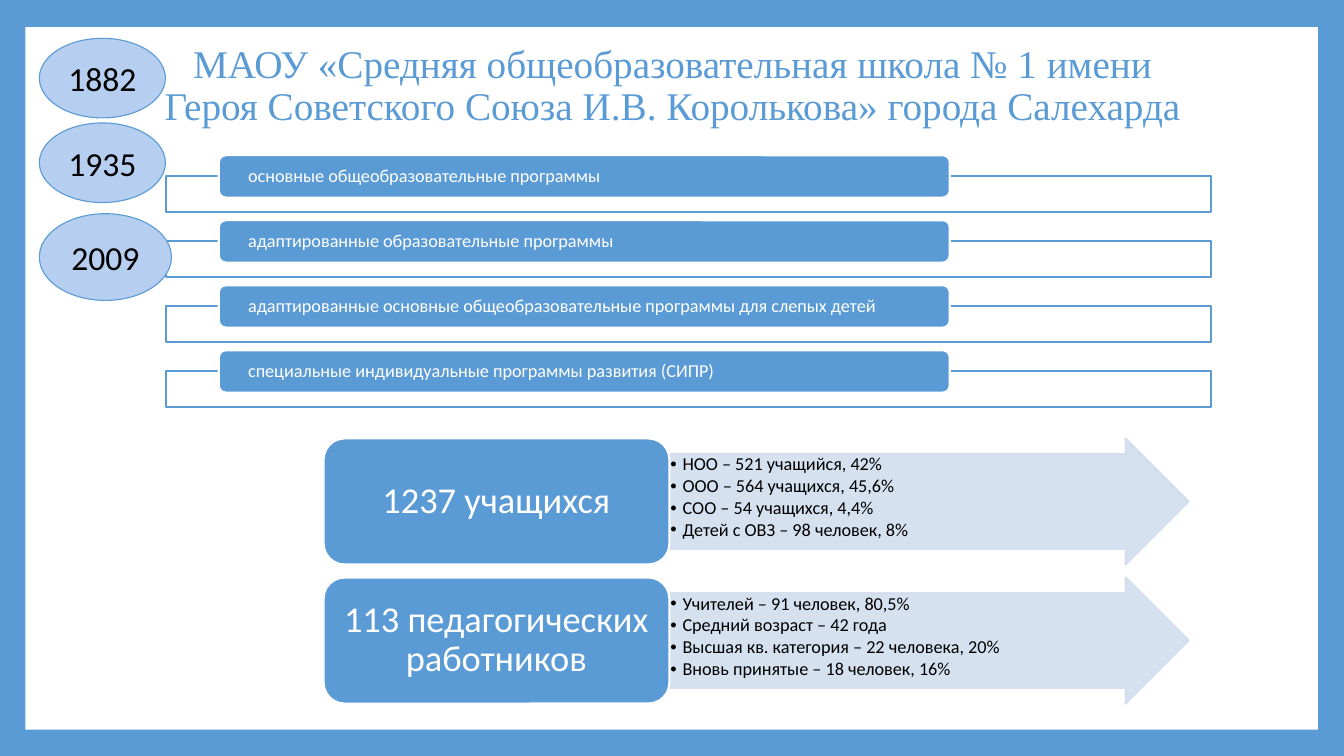
from lxml.etree import SubElement
from pptx import Presentation
from pptx.dml.color import RGBColor
from pptx.enum.shapes import MSO_SHAPE as SHAPE
from pptx.enum.text import MSO_ANCHOR as ANCHOR, PP_ALIGN as ALIGN
from pptx.oxml.ns import qn
from pptx.util import Inches, Pt

BLUE, PALE, OVAL = "5B9BD5", "D2DEEF", "B6CFF0"
WHITE, BLACK = "FFFFFF", "000000"


def color(hex_string):
    return RGBColor.from_string(hex_string)


class Deck:
    """Style and current slide; boxes are percentages of the slide's size."""

    font = "Calibri"

    def __init__(self, width, height):
        self.prs = Presentation()
        self.prs.slide_width, self.prs.slide_height = Inches(width), Inches(height)
        self.s = self.prs.slides.add_slide(self.prs.slide_layouts[6])

    def background(self, fill):
        self.s.background.fill.solid()
        self.s.background.fill.fore_color.rgb = color(fill)

    def place(self, box):
        w, h = self.prs.slide_width, self.prs.slide_height
        return [int(share * side / 100) for share, side in zip(box, (w, h, w, h))]

    def paint(self, fill, rgb, alpha):
        fill.solid()
        fill.fore_color.rgb = color(rgb)
        if alpha < 100:
            rgb_node = fill._xPr.find(qn("a:solidFill"))[0]
            SubElement(rgb_node, qn("a:alpha"), val=str(alpha * 1000))

    def shape(self, kind, box, fill, line=None, weight=1.5, alpha=100, line_alpha=100):
        sp = self.s.shapes.add_shape(kind, *self.place(box))
        sp.shadow.inherit = False
        self.paint(sp.fill, fill, alpha)
        if line:
            self.paint(sp.line.fill, line, line_alpha)
            sp.line.width = Pt(weight)
        else:
            sp.line.fill.background()
        return sp

    def textbox(self, box):
        return self.s.shapes.add_textbox(*self.place(box))

    def label(self, sp, text, size, rgb, font=None, align=ALIGN.CENTER,
              anchor=ANCHOR.MIDDLE, insets=(0.1, 0.05), spacing=0.9, bullets=False):
        tf = sp.text_frame
        tf.text = text
        tf.word_wrap = True
        tf.vertical_anchor = anchor
        tf.margin_left = tf.margin_right = Inches(insets[0])
        tf.margin_top = tf.margin_bottom = Inches(insets[1])
        for p in tf.paragraphs:
            p.alignment, p.line_spacing = align, spacing
            if bullets:
                self.bullet(p)
            for r in p.runs:
                r.font.name, r.font.size = font or self.font, Pt(size)
                r.font.color.rgb = color(rgb)

    def bullet(self, p):
        p.space_after = Pt(1.6)
        pPr = p._p.get_or_add_pPr()
        pPr.set("marL", str(Inches(0.12)))
        pPr.set("indent", str(-Inches(0.12)))
        SubElement(pPr, qn("a:buFont"), typeface="Arial")
        SubElement(pPr, qn("a:buChar"), char="•")


def main():
    deck = Deck(13.33, 7.5)

    # Frame and title
    deck.background(BLUE)
    deck.shape(SHAPE.RECTANGLE, (1.88, 3.6, 96.17, 92.93), WHITE)
    title = deck.textbox((11.1, 2.53, 77.87, 17.87))
    deck.label(title, "МАОУ «Средняя общеобразовательная школа № 1 имени "
               "Героя Советского Союза И.В. Королькова» города Салехарда",
               28, BLUE, font="Times New Roman")

    # Programmes: an outlined strip with a label bar on its upper edge
    programmes = [
        "основные общеобразовательные программы",
        "адаптированные образовательные программы",
        "адаптированные основные общеобразовательные программы для слепых детей",
        "специальные индивидуальные программы развития (СИПР)",
    ]
    for i, programme in enumerate(programmes):
        top = 20.53 + 8.6 * i
        deck.shape(SHAPE.RECTANGLE, (12.38, top + 2.75, 77.72, 4.8), WHITE, BLUE, alpha=90)
        bar = deck.shape(SHAPE.ROUNDED_RECTANGLE, (16.28, top, 54.39, 5.6), BLUE, WHITE)
        deck.label(bar, programme, 13, WHITE, align=ALIGN.LEFT, insets=(0.27, 0))

    # Years
    years = [
        ("1882", 5.07, 9.38, 10.53),
        ("1935", 16.27, 9.38, 10.53),
        ("2009", 28.27, 9.83, 11.47),
    ]
    for year, top, width, height in years:
        oval = deck.shape(SHAPE.OVAL, (2.93, top, width, height), OVAL, BLUE, weight=0.79)
        deck.label(oval, year, 24, BLACK, spacing=1.0)

    # Headcounts: a card with an arrow of details
    groups = [
        ("1237 учащихся", [
            "НОО – 521 учащийся, 42%",
            "ООО – 564 учащихся, 45,6%",
            "СОО – 54 учащихся, 4,4%",
            "Детей с ОВЗ – 98 человек, 8%",
        ]),
        ("113 педагогических работников", [
            "Учителей – 91 человек, 80,5%",
            "Средний возраст – 42 года",
            "Высшая кв. категория – 22 человека, 20%",
            "Вновь принятые – 18 человек, 16%",
        ]),
    ]
    for i, (total, details) in enumerate(groups):
        top, height = 58 + 18.4 * i, 16.67
        arrow = deck.shape(SHAPE.RIGHT_ARROW, (49.81, top, 38.63, height), PALE, PALE,
                           alpha=90, line_alpha=90)
        arrow.adjustments[0] = 0.75
        deck.label(arrow, "\n".join(details), 13, BLACK, align=ALIGN.LEFT,
                   anchor=ANCHOR.TOP, insets=(0.01, 0.01), bullets=True)
        card = deck.shape(SHAPE.ROUNDED_RECTANGLE, (24.08, top, 25.73, height), BLUE, WHITE)
        deck.label(card, total, 26, WHITE, insets=(0.11, 0.05))

    deck.prs.save("out.pptx")


if __name__ == "__main__":
    main()
